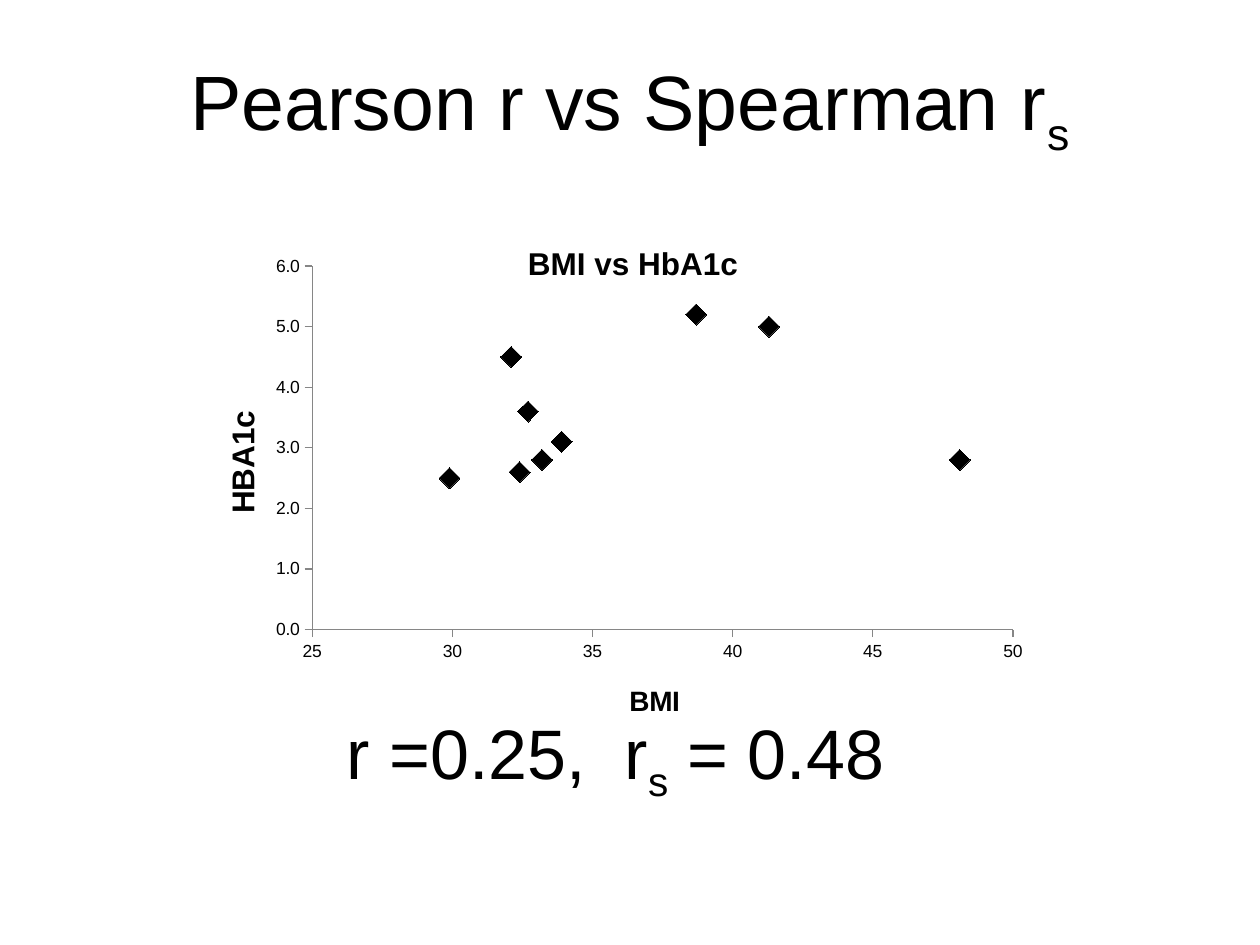
import pptx
import pptx.chart.data
import pptx.dml.color
import pptx.enum.chart
import pptx.enum.text
import pptx.oxml
import pptx.oxml.ns
import pptx.util
from pptx.util import Inches

COLOURS = {"text": "000000", "marker": "000000", "axis": "868686", "background": "FFFFFF"}
FONT = "Arial"
MEASUREMENTS = [  # BMI, HbA1c
    (32.4, 2.6), (33.9, 3.1), (29.9, 2.5), (41.3, 5.0), (32.7, 3.6),
    (32.1, 4.5), (38.7, 5.2), (33.2, 2.8), (48.1, 2.8),
]


def colour(name):
    return pptx.dml.color.RGBColor.from_string(COLOURS[name])


def format_font(font, size, bold=False):
    font.name = FONT
    font.size = pptx.util.Pt(size)
    font.bold = bold
    font.color.rgb = colour("text")


def add_text(paragraph, text, size=18, bold=False, subscript=False):
    run = paragraph.add_run()
    run.text = text
    format_font(run.font, size, bold)
    if subscript:
        run._r.get_or_add_rPr().set("baseline", "-25000")


def manual_layout(x, y, width=None, height=None):
    """Return a c:layout element; all values are fractions of the chart."""
    settings = [("xMode", "edge"), ("yMode", "edge"), ("x", x), ("y", y)]
    if width is not None:
        settings.insert(0, ("layoutTarget", "inner"))
        settings += [("w", width), ("h", height)]
    children = "".join(f'<c:{tag} val="{value}"/>' for tag, value in settings)
    namespace = pptx.oxml.ns.nsdecls("c")
    return pptx.oxml.parse_xml(
        f"<c:layout {namespace}><c:manualLayout>{children}</c:manualLayout></c:layout>")


def place(element, layout, position):
    """Replace the layout of a chart part, at the given child position."""
    for old_layout in element.findall(pptx.oxml.ns.qn("c:layout")):
        element.remove(old_layout)
    element.insert(position, layout)


class SlideBuilder:
    def __init__(self, presentation):
        self.slide = presentation.slides.add_slide(presentation.slide_layouts[5])
        self.slide.background.fill.solid()
        self.slide.background.fill.fore_color.rgb = colour("background")

    def title(self, pieces, left, top, width, height, size):
        shape = self.slide.shapes.title
        shape.left, shape.top, shape.width, shape.height = map(
            Inches, (left, top, width, height))
        frame = shape.text_frame
        frame.vertical_anchor = pptx.enum.text.MSO_ANCHOR.MIDDLE
        frame.paragraphs[0].alignment = pptx.enum.text.PP_ALIGN.CENTER
        self.fill_text(frame, pieces, size)

    def text_box(self, pieces, left, top, width, height, size):
        shape = self.slide.shapes.add_textbox(*map(Inches, (left, top, width, height)))
        shape.text_frame.word_wrap = True
        shape.text_frame.auto_size = pptx.enum.text.MSO_AUTO_SIZE.SHAPE_TO_FIT_TEXT
        self.fill_text(shape.text_frame, pieces, size)

    def fill_text(self, frame, pieces, size):
        for text, subscript in pieces:
            add_text(frame.paragraphs[0], text, size=size, subscript=subscript)

    def scatter_chart(self, points, left, top, width, height):
        data = pptx.chart.data.XyChartData()
        series_data = data.add_series("Series 1")
        for bmi, hba1c in points:
            series_data.add_data_point(bmi, hba1c)
        chart = self.slide.shapes.add_chart(
            pptx.enum.chart.XL_CHART_TYPE.XY_SCATTER,
            *map(Inches, (left, top, width, height)), data).chart
        format_font(chart.font, 10)
        chart.has_legend = False
        chart.has_title = True
        self.chart_title(chart.chart_title, "BMI vs HbA1c", 18, 0.38, 0.05)
        self.axis(chart.category_axis, 25, 50, 5, "General")
        self.chart_title(chart.category_axis.axis_title, "BMI", 16, 0.5, 0.89)
        self.axis(chart.value_axis, 0, 6, 1, "0.0")
        self.chart_title(chart.value_axis.axis_title, "HBA1c", 18, 0.02, 0.37)
        plot = chart.plots[0]
        plot.vary_by_categories = False
        self.markers(plot.series[0])
        plot_area = chart._chartSpace.chart.plotArea
        place(plot_area, manual_layout(0.133, 0.106, 0.824, 0.692), 0)

    def chart_title(self, title, text, size, x, y):
        """Fill the title of a chart or an axis, at fractions of the chart."""
        add_text(title.text_frame.paragraphs[0], text, size=size, bold=True)
        place(title._element, manual_layout(x, y), 1)

    def axis(self, axis, minimum, maximum, step, number_format):
        axis.minimum_scale, axis.maximum_scale, axis.major_unit = minimum, maximum, step
        axis.has_major_gridlines = False
        axis.has_title = True
        axis.major_tick_mark = pptx.enum.chart.XL_TICK_MARK.OUTSIDE
        axis.minor_tick_mark = pptx.enum.chart.XL_TICK_MARK.NONE
        axis.tick_labels.number_format = number_format
        axis.tick_labels.number_format_is_linked = False
        format_font(axis.tick_labels.font, 10)
        axis.format.line.color.rgb = colour("axis")
        axis.format.line.width = pptx.util.Pt(0.75)

    def markers(self, series):
        series.smooth = False
        series.format.line.fill.background()
        series.marker.style = pptx.enum.chart.XL_MARKER_STYLE.DIAMOND
        series.marker.size = 12
        series.marker.format.fill.solid()
        series.marker.format.fill.fore_color.rgb = colour("marker")
        series.marker.format.line.color.rgb = colour("marker")


def main():
    presentation = pptx.Presentation()
    presentation.slide_width, presentation.slide_height = Inches(10), Inches(7.5)
    builder = SlideBuilder(presentation)
    builder.title([("Pearson r vs Spearman r", False), ("s", True)],
                  0.5, 0.33, 9, 1.03, size=44)
    builder.scatter_chart(MEASUREMENTS, 1.58, 1.67, 6.75, 4.17)
    builder.text_box([(" r =0.25,  r", False), ("s", True), (" = 0.48", False)],
                     2.5, 5.58, 4.92, 0.77, size=40)
    presentation.save("out.pptx")


if __name__ == "__main__":
    main()
